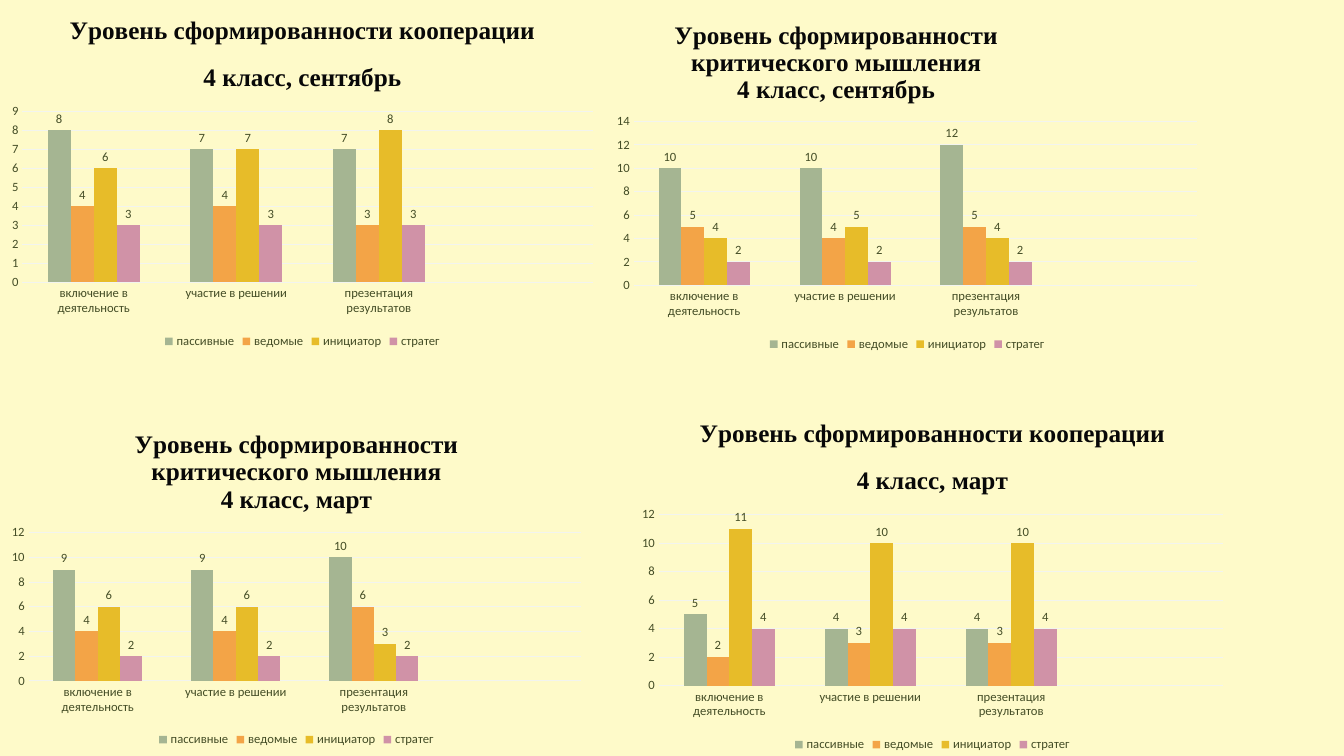
from dataclasses import dataclass

from lxml import etree
from pptx import Presentation
from pptx.chart.data import CategoryChartData
from pptx.dml.color import RGBColor
from pptx.enum.chart import XL_CHART_TYPE, XL_LABEL_POSITION, XL_LEGEND_POSITION, XL_TICK_MARK
from pptx.oxml import parse_xml
from pptx.oxml.ns import nsdecls, qn
from pptx.util import Pt

COLUMNS = XL_CHART_TYPE.COLUMN_CLUSTERED
OUTSIDE_END = XL_LABEL_POSITION.OUTSIDE_END
BOTTOM = XL_LEGEND_POSITION.BOTTOM
NO_TICK = XL_TICK_MARK.NONE


@dataclass(frozen=True)
class Theme:
    background: str = "FEFAC9"
    title: str = "080808"
    text: str = "444D26"
    grid: str = "F2F4EF"
    series: tuple = ("A5B592", "F3A447", "E7BC29", "D092A7")
    title_font: str = "Times New Roman"
    text_font: str = "Calibri"
    title_size: int = 18
    base_size: int = 10
    text_size: int = 9
    line_width: float = 0.75


THEME = Theme()
LEVELS = ("пассивные", "ведомые", "инициатор", "стратег")
# The fourth category is an empty slot at the right of every chart.
SKILLS = ("включение в деятельность", "участие в решении", "презентация результатов", "")
COOPERATION = "Уровень сформированности кооперации"
THINKING = "Уровень сформированности критического мышления"

# Position and size in points, title lines, values per level, title offset
CHARTS = (
    ((0, 0, 432, 252), (COOPERATION, "\v4 класс, сентябрь"),
     ((8, 7, 7), (4, 4, 3), (6, 7, 8), (3, 3, 3)), None),
    ((450, 288, 432, 252), (COOPERATION, "\v4 класс, март"),
     ((5, 4, 4), (2, 3, 3), (11, 10, 10), (4, 4, 4)), None),
    ((432, 2, 432, 252), (THINKING, "4 класс, сентябрь"),
     ((10, 10, 12), (5, 4, 5), (4, 5, 4), (2, 2, 2)), (0.11, 0.04)),
    ((0, 296, 423.5, 240.5), (THINKING, "4 класс, март"),
     ((9, 9, 10), (4, 4, 6), (6, 6, 3), (2, 2, 2)), None),
)


def style_font(font, size=THEME.text_size, color=THEME.text, name=THEME.text_font, bold=False):
    font.size = Pt(size)
    font.name = name
    font.bold = bold
    font.color.rgb = RGBColor.from_string(color)


def style_line(line):
    line.width = Pt(THEME.line_width)
    line.color.rgb = RGBColor.from_string(THEME.grid)


def add_text(p, text, **style):
    """Write text into a paragraph; a leading vertical tab is a line break."""
    if text.startswith("\v"):
        p.add_line_break()
    r = p.add_run()
    r.text = text.lstrip("\v")
    style_font(r.font, **style)


def move_title(title, x, y):
    """Place the title at fractions of the chart's width and height."""
    layout = parse_xml(
        f'<c:layout {nsdecls("c")}><c:manualLayout>'
        '<c:xMode val="edge"/><c:yMode val="edge"/>'
        f'<c:x val="{x}"/><c:y val="{y}"/></c:manualLayout></c:layout>')
    node = title._element
    for old in node.findall(qn("c:layout")):
        node.remove(old)
    node.find(qn("c:tx")).addnext(layout)


def add_title(chart, lines, offset):
    chart.has_title = True
    title = chart.chart_title
    title.include_in_layout = False
    tf = title.text_frame
    for i, text in enumerate(lines):
        p = tf.add_paragraph() if i else tf.paragraphs[0]
        add_text(p, text, size=THEME.title_size, color=THEME.title,
                 name=THEME.title_font, bold=True)
    if offset:
        move_title(title, *offset)


def style_axes(chart):
    for axis in (chart.category_axis, chart.value_axis):
        axis.major_tick_mark = axis.minor_tick_mark = NO_TICK
        style_font(axis.tick_labels.font)
    style_line(chart.category_axis.format.line)
    chart.value_axis.format.line.fill.background()
    chart.value_axis.has_major_gridlines = True
    style_line(chart.value_axis.major_gridlines.format.line)


def style_series(plot):
    plot.gap_width = 219
    plot.overlap = 0
    plot.vary_by_categories = False
    for series, color in zip(plot.series, THEME.series):
        series.format.fill.solid()
        series.format.fill.fore_color.rgb = RGBColor.from_string(color)
        labels = series.data_labels
        labels.show_value = True
        labels.position = OUTSIDE_END
        style_font(labels.font)


def add_legend(chart):
    chart.has_legend = True
    chart.legend.position = BOTTOM
    chart.legend.include_in_layout = False
    style_font(chart.legend.font)


def add_level_chart(slide, box, lines, values, offset):
    data = CategoryChartData()
    data.categories = SKILLS
    for level, counts in zip(LEVELS, values):
        data.add_series(level, (*counts, None))
    chart = slide.shapes.add_chart(COLUMNS, *map(Pt, box), data).chart
    style_font(chart.font, size=THEME.base_size)
    add_title(chart, lines, offset)
    style_axes(chart)
    style_series(chart.plots[0])
    add_legend(chart)


def main():
    prs = Presentation()
    prs.slide_width, prs.slide_height = Pt(960), Pt(540)
    slide = prs.slides.add_slide(prs.slide_layouts[6])
    slide.background.fill.solid()
    slide.background.fill.fore_color.rgb = RGBColor.from_string(THEME.background)
    for box, lines, values, offset in CHARTS:
        add_level_chart(slide, box, lines, values, offset)
    prs.save("out.pptx")


if __name__ == "__main__":
    main()
